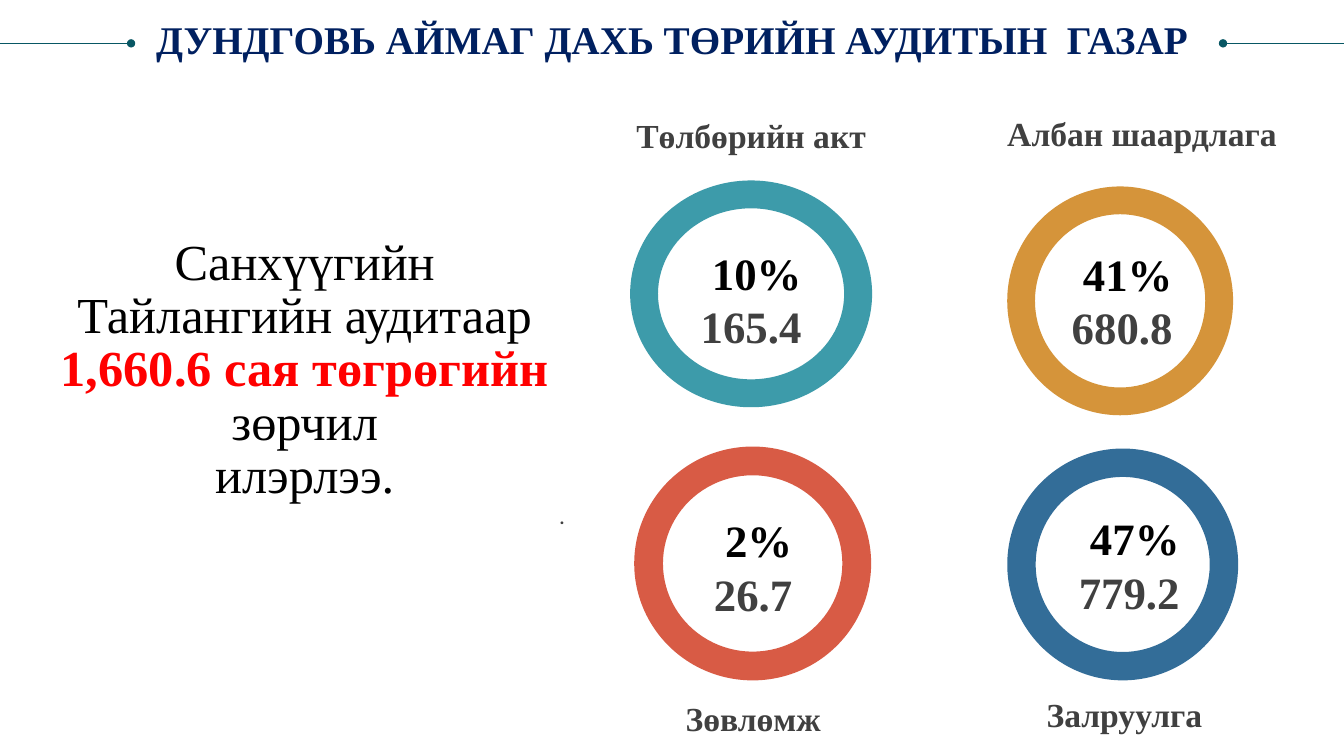
from dataclasses import dataclass

from lxml import etree
from pptx import Presentation
from pptx.dml.color import RGBColor
from pptx.enum.shapes import MSO_CONNECTOR, MSO_SHAPE
from pptx.enum.text import PP_ALIGN
from pptx.oxml.ns import qn
from pptx.util import Inches, Pt

STRAIGHT = MSO_CONNECTOR.STRAIGHT
DONUT = MSO_SHAPE.DONUT
LEFT, CENTER, RIGHT = PP_ALIGN.LEFT, PP_ALIGN.CENTER, PP_ALIGN.RIGHT


@dataclass(frozen=True)
class Theme:
    font: str = "Times New Roman"
    dot_font: str = "Roboto"
    title: str = "002060"
    rule: str = "085764"
    black: str = "000000"
    gray: str = "404040"
    red: str = "FF0000"
    teal: str = "0D8295"
    orange: str = "CB7A09"
    coral: str = "CF3317"
    blue: str = "00497F"
    title_size: int = 28
    message_size: int = 36
    value_size: int = 32
    label_size: int = 24
    dot_size: int = 18
    line_height: int = 19


THEME = Theme()

RINGS = [
    (THEME.teal, (6.25, 1.79, 2.4, 2.25), (6.92, 2.71), " 10%", "165.4",
     "Төлбөрийн акт", (6.12, 1.28, 2.66, 0.27), CENTER),
    (THEME.orange, (9.99, 1.85, 2.24, 2.27), (10.6, 2.72), " 41%", "680.8",
     "Албан шаардлага", (9.99, 1.26, 2.97, 0.28), LEFT),
    (THEME.coral, (6.29, 4.43, 2.35, 2.32), (6.94, 5.36), " 2%", "26.7",
     "Зөвлөмж", (6.64, 7.06, 1.5, 0.27), RIGHT),
    (THEME.blue, (9.99, 4.45, 2.29, 2.3), (10.67, 5.34), " 47%", "779.2",
     "Залруулга", (10.38, 7.02, 1.75, 0.27), LEFT),
]


def add_text(slide, area, lines, size, bold=True, align=CENTER,
             spacing=Pt(THEME.line_height), gap=0):
    box = slide.shapes.add_textbox(*map(Inches, area))
    frame = box.text_frame
    frame.word_wrap = True
    frame.margin_left = frame.margin_top = 0
    frame.margin_right = frame.margin_bottom = 0
    frame.text = "\n".join(text for text, color in lines)
    for para, (text, color) in zip(frame.paragraphs, lines):
        para.alignment = align
        para.line_spacing = spacing
        para.space_after = Pt(gap)
        font = para.runs[0].font
        font.name = THEME.font
        font.size = Pt(size)
        font.bold = bold
        font.color.rgb = RGBColor.from_string(color)
    return frame.paragraphs


def add_rule(slide, edge, dot, y=0.43):
    line = slide.shapes.add_connector(
        STRAIGHT, Inches(edge), Inches(y), Inches(dot), Inches(y))
    line.line.color.rgb = RGBColor.from_string(THEME.rule)
    line.line.width = Pt(0.5)
    etree.SubElement(line.line._get_or_add_ln(), qn("a:tailEnd"), type="oval")
    etree.SubElement(line._element.spPr, qn("a:effectLst"))


def add_ring(slide, area, color):
    ring = slide.shapes.add_shape(DONUT, *map(Inches, area))
    ring.shadow.inherit = False
    ring.adjustments[0] = 0.123
    ring.fill.solid()
    ring.fill.fore_color.rgb = RGBColor.from_string(color)
    ring.line.fill.background()
    tint = ring._element.spPr.find(".//" + qn("a:srgbClr"))
    etree.SubElement(tint, qn("a:alpha"), val="80000")


def add_message(slide):
    lines = [
        ("Санхүүгийн ", THEME.black),
        ("Тайлангийн аудитаар ", THEME.black),
        ("1,660.6 сая төгрөгийн ", THEME.red),
        ("зөрчил ", THEME.black),
        ("илэрлээ. ", THEME.black),
        (". ", THEME.gray),
    ]
    paras = add_text(slide, (0.5, 2.62, 5.17, 2.66), lines,
                     THEME.message_size, bold=False, gap=THEME.line_height)
    paras[2].runs[0].font.bold = True
    paras[4].space_after = Pt(0)
    dot = paras[5]
    dot.alignment = RIGHT
    dot.space_after = Pt(0)
    dot.runs[0].font.size = Pt(THEME.dot_size)
    dot.runs[0].font.name = THEME.dot_font


def main():
    deck = Presentation()
    deck.slide_width = Inches(13.33)
    deck.slide_height = Inches(7.5)
    slide = deck.slides.add_slide(deck.slide_layouts[6])

    add_rule(slide, 13.33, 12.13)
    add_rule(slide, 0, 1.3)
    add_text(slide, (0.25, 0.2, 12.83, 0.42),
             [("ДУНДГОВЬ АЙМАГ ДАХЬ ТӨРИЙН АУДИТЫН  ГАЗАР", THEME.title)],
             THEME.title_size, spacing=0.9)
    add_message(slide)
    for color, area, corner, share, amount, label, label_area, align in RINGS:
        add_ring(slide, area, color)
        add_text(slide, (*corner, 1.06, 0.8),
                 [(share, THEME.black), (amount, THEME.gray)],
                 THEME.value_size, gap=THEME.line_height)
        add_text(slide, label_area, [(label, THEME.gray)],
                 THEME.label_size, align=align)

    deck.save("out.pptx")


if __name__ == "__main__":
    main()
